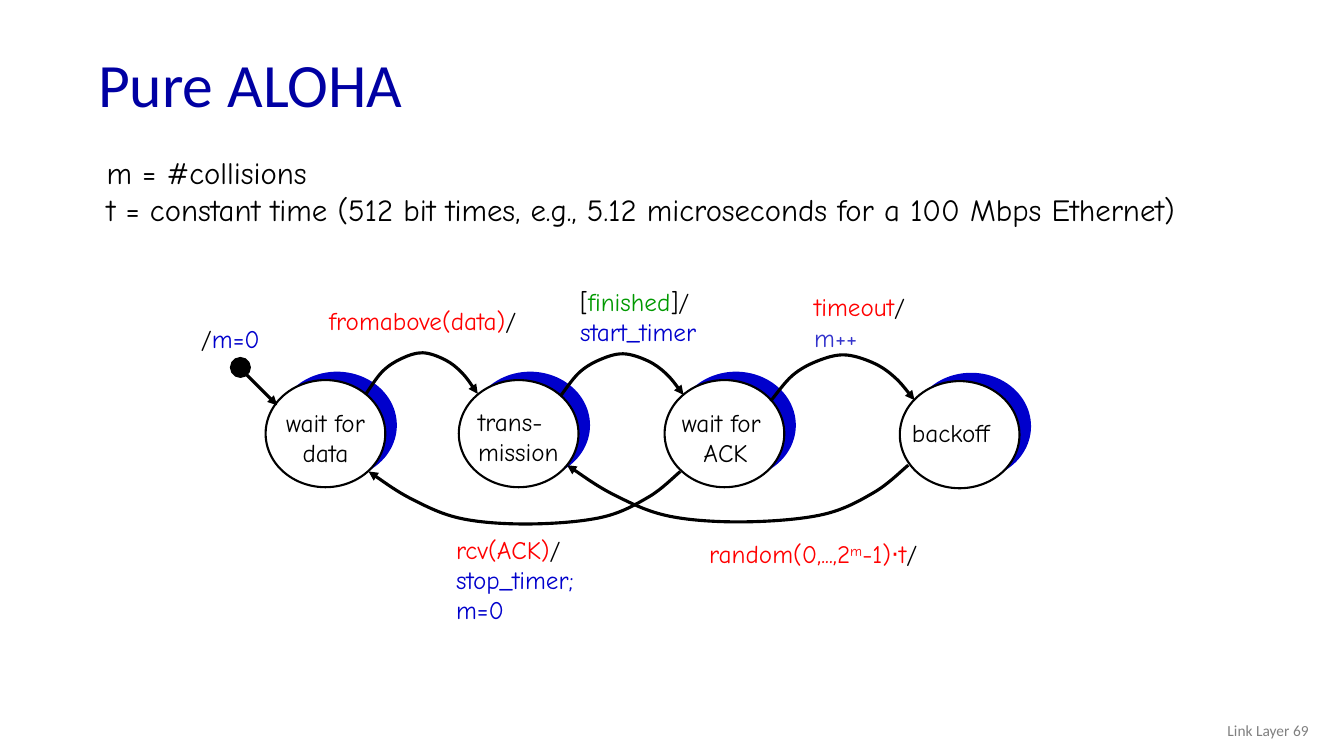
from lxml import etree
from pptx import Presentation
from pptx import util as u
from pptx.dml.color import RGBColor
from pptx.enum import shapes, text
from pptx.oxml import ns

PX = 9525
NAVY = RGBColor(0x00, 0x00, 0xA3)
BLUE = RGBColor(0x00, 0x00, 0xCC)
SOFT_BLUE = RGBColor(0x33, 0x33, 0xCC)
RED = RGBColor(0xFF, 0x00, 0x00)
GREEN = RGBColor(0x00, 0x99, 0x00)
GREY = RGBColor(0x80, 0x80, 0x80)
BLACK = RGBColor(0x00, 0x00, 0x00)
WHITE = RGBColor(0xFF, 0xFF, 0xFF)
BODY_FONT = "Comic Neue"
HEAD_FONT = "Calibri"
CENTER = text.PP_ALIGN.CENTER
LEFT = text.PP_ALIGN.LEFT

STATE_W, STATE_H = 114, 102
SHADE_DX, SHADE_DY = 11, -8
OVER = [(0, 1), (.15, .45), (.32, .14), (.51, 0), (.71, .17), (.86, .48), (1, .98)]
UNDER = [(1, 0), (.9, .48), (.75, .87), (.52, 1), (.3, .9), (.14, .53), (0, 0)]

STATES = [
    (253, 362, ["wait for\ndata"], (2, 21, 110, 68), CENTER),
    (437, 362, ["trans-", "mission"], (9, 20, 101, 68), LEFT),
    (633, 362, ["wait for \nACK"], (-1, 21, 118, 68), CENTER),
    (857, 363, ["backoff"], (2, 30, 109, 38), LEFT),
]
TRANSITIONS = [
    ((348, 336, 107, 40), OVER),
    ((534, 337, 117, 40), OVER),
    ((734, 338, 137, 44), OVER),
    ((351, 449, 297, 50), UNDER),
    ((540, 443, 325, 54), UNDER),
]
LABELS = [
    ((182, 303, 78, 38), [[("/", BLACK), ("m=0", BLUE)]]),
    ((304, 286, 221, 38), [[("fromabove(data)", RED), ("/", BLACK)]]),
    ((543, 268, 156, 68), [[("[", BLACK), ("finished", GREEN), ("]/\n", BLACK),
                            ("start_timer", BLUE)]]),
    ((766, 273, 119, 68), [[("timeout", RED), ("/\n", BLACK), ("m++", SOFT_BLUE)]]),
    ((425, 504, 153, 97), [[("rcv(ACK)", RED), ("/\n", BLACK), ("stop_timer;", BLUE)],
                           [("m=0", BLUE)]]),
    ((666, 508, 245, 38), [[("random(0,...,2", RED), ("m", RED, 30),
                            ("-1)⋅t", RED), ("/", BLACK)]]),
]


def px(*lengths):
    """Turn pixel lengths into EMU."""
    return [u.Emu(round(length * PX)) for length in lengths]


def add_run(paragraph, words, size, font, color, raised=0):
    """Add formatted words, raised by a percentage."""
    run = paragraph.add_run()
    run.text = words
    run.font.name = font
    run.font.size = u.Pt(size)
    run.font.color.rgb = color
    if raised:
        run._r.get_or_add_rPr().set("baseline", str(raised * 1000))


def add_text(slide, box, paragraphs, size=18, font=BODY_FONT, color=BLACK, align=LEFT,
             anchor=text.MSO_ANCHOR.TOP, wrap=False, spacing=None):
    """Add a text box; a paragraph is a string or a list of (text, colour, raise) runs."""
    frame = slide.shapes.add_textbox(*px(*box)).text_frame
    frame.word_wrap = wrap
    frame.auto_size = text.MSO_AUTO_SIZE.NONE if wrap else text.MSO_AUTO_SIZE.SHAPE_TO_FIT_TEXT
    frame.vertical_anchor = anchor
    for index, content in enumerate(paragraphs):
        paragraph = frame.add_paragraph() if index else frame.paragraphs[0]
        paragraph.alignment = align
        paragraph.line_spacing = spacing
        runs = [(content, color)] if isinstance(content, str) else content
        for words, run_color, *raised in runs:
            for number, line in enumerate(words.split("\n")):
                if number:
                    paragraph.add_line_break()
                if line:
                    add_run(paragraph, line, size, font, run_color, *raised)


def add_ellipse(slide, box, fill, outlined=True):
    """Add a flat ellipse."""
    shape = slide.shapes.add_shape(shapes.MSO_SHAPE.OVAL, *px(*box))
    shape.shadow.inherit = False
    shape.fill.solid()
    shape.fill.fore_color.rgb = fill
    if outlined:
        shape.line.color.rgb = BLACK
        shape.line.width = u.Pt(1.5)
    else:
        shape.line.fill.background()


def style_arrow(shape):
    """Give a line its weight and a triangle at its end, without a shadow."""
    shape.line.color.rgb = BLACK
    shape.line.width = u.Pt(2.25)
    etree.SubElement(shape.line._get_or_add_ln(), ns.qn("a:tailEnd"), type="triangle")
    etree.SubElement(shape._element.spPr, ns.qn("a:effectLst"))


def round_segments(curve, points):
    """Turn the straight segments of an outline into smooth Bezier curves."""
    padded = [points[0], *points, points[-1]]
    segments = list(curve._element.iter(ns.qn("a:lnTo")))
    for segment, a, b, c, d in zip(segments, padded, padded[1:], padded[2:], padded[3:]):
        leave = [q + (r - p) / 6 for p, q, r in zip(a, b, c)]
        arrive = [q - (r - p) / 6 for p, q, r in zip(b, c, d)]
        bezier = etree.Element(ns.qn("a:cubicBezTo"))
        for x, y in (leave, arrive, c):
            etree.SubElement(bezier, ns.qn("a:pt"), x=str(round(x)), y=str(round(y)))
        segment.getparent().replace(segment, bezier)


def add_transition(slide, box, knots):
    """Draw a curved arrow whose relative knots fill the box."""
    left, top, width, height = px(*box)
    points = [(x * width, y * height) for x, y in knots]
    corners = [(round(left + x), round(top + y)) for x, y in points]
    builder = slide.shapes.build_freeform(*corners[0])
    builder.add_line_segments(corners[1:], close=False)
    curve = builder.convert_to_shape()
    round_segments(curve, points)
    curve.fill.background()
    style_arrow(curve)


def add_state(slide, left, top, name, label, align):
    """Draw a state with its blue shade and its name."""
    add_ellipse(slide, (left + SHADE_DX, top + SHADE_DY, STATE_W, STATE_H), BLUE, outlined=False)
    add_ellipse(slide, (left, top, STATE_W, STATE_H), WHITE)
    dx, dy, width, height = label
    add_text(slide, (left + dx, top + dy, width, height), name, align=align)


def add_start(slide, left, top, size):
    """Draw the start dot and the arrow to the first state."""
    middle = size // 2
    arrow = slide.shapes.add_connector(
        shapes.MSO_CONNECTOR.STRAIGHT,
        *px(left + middle, top + middle + 1, left + middle + 35, top + middle + 36))
    style_arrow(arrow)
    add_ellipse(slide, (left, top, size, size), BLACK)


def add_state_machine(slide):
    """Draw states, transitions and their labels."""
    for state in STATES:
        add_state(slide, *state)
    for box, knots in TRANSITIONS:
        add_transition(slide, box, knots)
    add_start(slide, 220, 341, 18)
    for box, paragraphs in LABELS:
        add_text(slide, box, paragraphs)


def main():
    """Build and save the slide."""
    presentation = Presentation()
    presentation.slide_width, presentation.slide_height = px(1280, 720)
    slide = presentation.slides.add_slide(presentation.slide_layouts[6])
    middle = text.MSO_ANCHOR.MIDDLE
    add_text(slide, (84, 36, 1104, 94), ["Pure ALOHA"], size=44, font=HEAD_FONT,
             color=NAVY, anchor=middle, wrap=True, spacing=0.9)
    add_text(slide, (92, 142, 1155, 116),
             ["m = #collisions",
              "t = constant time (512 bit times, e.g., 5.12 microseconds for a 100 Mbps Ethernet)"],
             size=22)
    add_state_machine(slide)
    add_text(slide, (968, 677, 288, 38), ["Link Layer 69"], size=11, font=HEAD_FONT,
             color=GREY, align=text.PP_ALIGN.RIGHT, anchor=middle, wrap=True)
    presentation.save("out.pptx")


if __name__ == "__main__":
    main()
